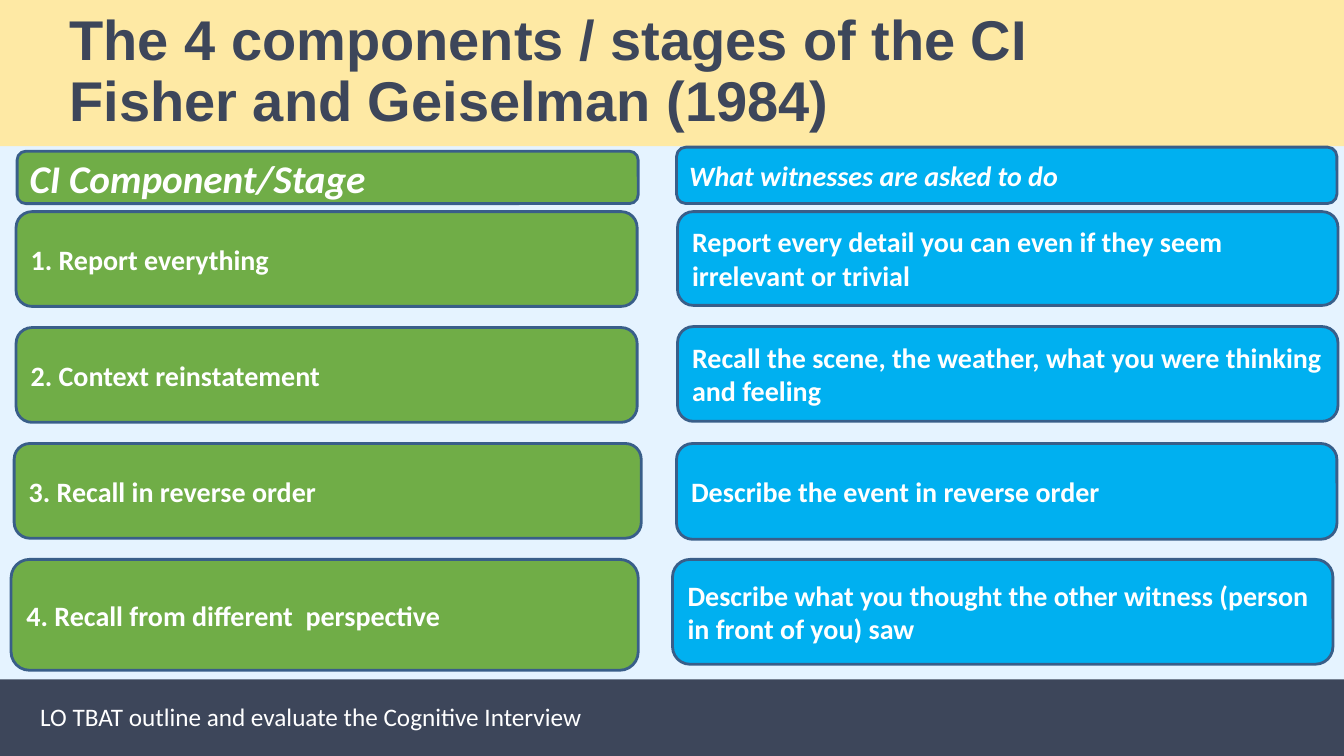
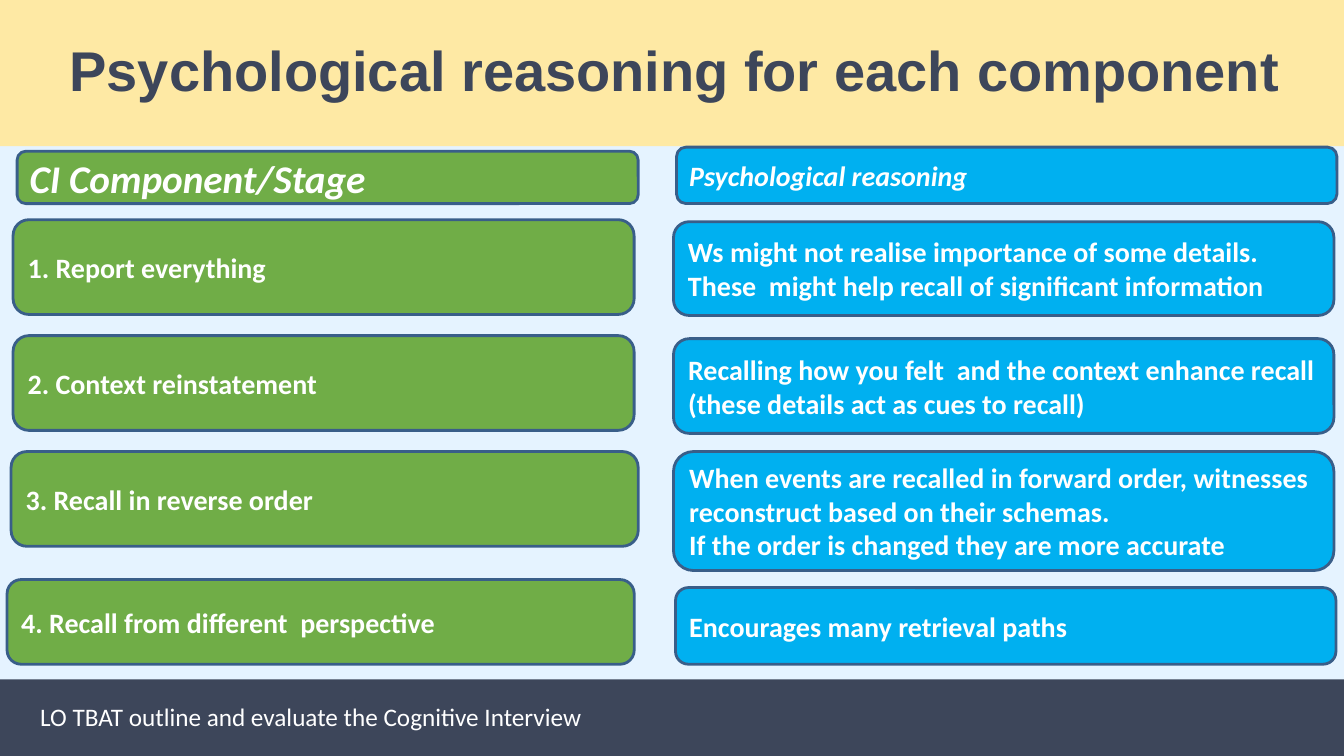
from pptx import Presentation
from pptx.dml.color import RGBColor
from pptx.enum.shapes import MSO_SHAPE
from pptx.enum.text import MSO_ANCHOR, PP_ALIGN
from pptx.util import Emu, Pt

# Shared look: 100 px to the inch
W, H = 1333, 750
PALE, CREAM, NAVY = "E5F3FF", "FEE9A4", "3D465A"
GREEN, BLUE, EDGE, WHITE = "70AD47", "00B0F0", "395E89", "FFFFFF"
TITLE_H, FOOTER_Y = 145, 674
FOOTER = "LO TBAT outline and evaluate the Cognitive Interview"
STAGES = ["1. Report everything", "2. Context reinstatement",
          "3. Recall in reverse order", "4. Recall from different  perspective"]
STAGE_WIDTHS = [616, 616, 622, 622]
ANSWER_W = 655


def px(n):
    return Emu(n * 9144)


def rgb(color):
    return RGBColor.from_string(color)


def write(sp, text, size, color=WHITE, font="Calibri", bold=True, italic=False,
          left=10, spacing=1.0):
    tf = sp.text_frame
    tf.word_wrap = True
    tf.vertical_anchor = MSO_ANCHOR.MIDDLE
    tf.margin_left, tf.margin_right = px(left), px(10)
    tf.margin_top = tf.margin_bottom = px(5)
    tf.text = text
    for p in tf.paragraphs:
        p.alignment = PP_ALIGN.LEFT
        p.line_spacing = spacing
        p.font.name, p.font.size = font, Pt(size)
        p.font.bold, p.font.italic = bold, italic
        p.font.color.rgb = rgb(color)


def box(s, x, y, w, h, fill, shape=MSO_SHAPE.RECTANGLE, line=None):
    sp = s.shapes.add_shape(shape, px(x), px(y), px(w), px(h))
    sp.shadow.inherit = False
    sp.fill.solid()
    sp.fill.fore_color.rgb = rgb(fill)
    if line:
        sp.line.color.rgb = rgb(line)
        sp.line.width = Pt(2)
    else:
        sp.line.fill.background()
    return sp


def card(s, x, y, w, h, fill, text, size=20, italic=False):
    sp = box(s, x, y, w, h, fill, MSO_SHAPE.ROUNDED_RECTANGLE, EDGE)
    write(sp, text, size, italic=italic)


def title_band(s, x, y, w, h, text):
    sp = box(s, x, y, w, h, CREAM)
    write(sp, text, 40, NAVY, "Arial", left=69, spacing=0.9)


def footer_band(s, x, y, w, h):
    box(s, x, y, w, h, NAVY)
    label = s.shapes.add_textbox(px(x + 30), px(y + 17), px(912), px(40))
    write(label, FOOTER, 18, bold=False)


def column(s, x, y, w, h, fill, heading, size, cards):
    """Heading of w by h, then cards given as (dx, dy, width, height, text)."""
    card(s, x, y, w, h, fill, heading, size, italic=True)
    for dx, dy, cw, ch, text in cards:
        card(s, x + dx, y + dy, cw, ch, fill, text)


def stage_slide(prs, title, stage_places, heading, answers):
    s = prs.slides.add_slide(prs.slide_layouts[6])
    s.background.fill.solid()
    s.background.fill.fore_color.rgb = rgb(PALE)
    footer_band(s, 0, FOOTER_Y, W, H - FOOTER_Y)
    title_band(s, 0, 0, W, TITLE_H, title)
    # Stages on the left, answers on the right
    stages = [(dx, dy, w, h, text) for (dx, dy, h), w, text
              in zip(stage_places, STAGE_WIDTHS, STAGES)]
    column(s, 17, 150, 616, 52, GREEN, "CI Component/Stage", 28, stages)
    replies = [(dx, dy, ANSWER_W, h, text) for dx, dy, h, text in answers]
    column(s, 671, 146, ANSWER_W, 56, BLUE, heading, 20, replies)


def main():
    prs = Presentation()
    prs.slide_width, prs.slide_height = px(W), px(H)

    # What witnesses do
    stage_slide(
        prs, "The 4 components / stages of the CI\vFisher and Geiselman (1984)",
        [(-1, 60, 94), (-1, 175, 94), (-3, 290, 94), (-6, 405, 110)],
        "What witnesses are asked to do",
        [(1, 64, 93, "Report every detail you can even if they seem "
                     "irrelevant or trivial"),
         (1, 178, 94, "Recall the scene, the weather, what you were thinking "
                      "and feeling"),
         (0, 294, 95, "Describe the event in reverse order"),
         (-4, 409, 104, "Describe what you thought the other witness (person "
                        "in front of you) saw")])

    # Why each stage works
    stage_slide(
        prs, "Psychological reasoning for each component",
        [(-4, 68, 94), (-4, 183, 94), (-6, 298, 94), (-10, 425, 84)],
        "Psychological reasoning",
        [(-3, 74, 93, "Ws might not realise importance of some details. "
                      "These  might help recall of significant information"),
         (-3, 190, 94, "Recalling how you felt  and the context enhance recall "
                       "(these details act as cues to recall)"),
         (-3, 302, 118, "When events are recalled in forward order, witnesses "
                        "reconstruct based on their schemas.\n"
                        "If the order is changed they are more accurate"),
         (-1, 437, 76, "Encourages many retrieval paths")])

    prs.save("out.pptx")


if __name__ == "__main__":
    main()
